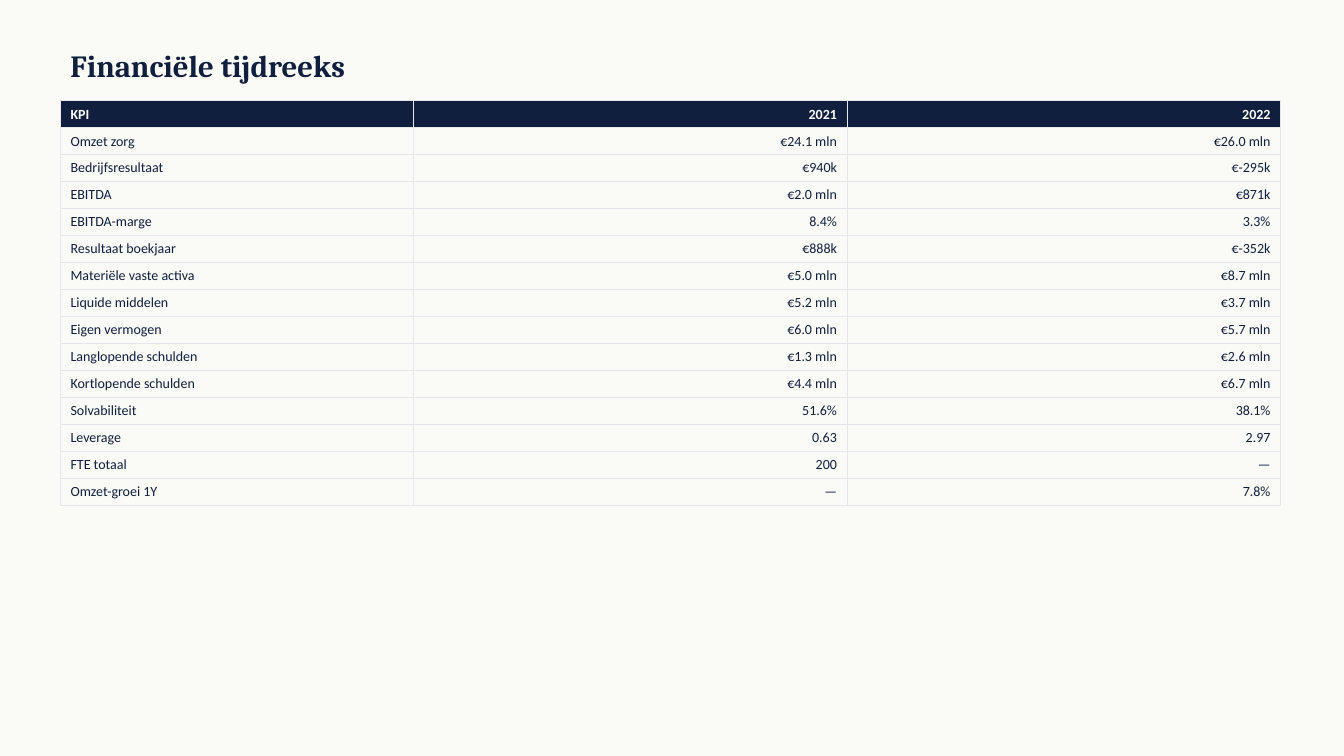
from dataclasses import dataclass

from lxml import etree
from pptx import Presentation, util as u
from pptx.dml.color import RGBColor
from pptx.enum import text
from pptx.oxml import ns

PX = 9144


@dataclass(frozen=True)
class Theme:
    paper: str = "FAFAF7"
    navy: str = "0F1F3D"
    white: str = "FFFFFF"
    rule: str = "E5E7EB"
    rule_pt: float = 0.5
    title_font: str = "Cambria"
    title_pt: int = 22
    body_font: str = "Calibri"
    body_pt: int = 10


T = Theme()

KPIS = [
    ("KPI", "2021", "2022"),
    ("Omzet zorg", "€24.1 mln", "€26.0 mln"),
    ("Bedrijfsresultaat", "€940k", "€-295k"),
    ("EBITDA", "€2.0 mln", "€871k"),
    ("EBITDA-marge", "8.4%", "3.3%"),
    ("Resultaat boekjaar", "€888k", "€-352k"),
    ("Materiële vaste activa", "€5.0 mln", "€8.7 mln"),
    ("Liquide middelen", "€5.2 mln", "€3.7 mln"),
    ("Eigen vermogen", "€6.0 mln", "€5.7 mln"),
    ("Langlopende schulden", "€1.3 mln", "€2.6 mln"),
    ("Kortlopende schulden", "€4.4 mln", "€6.7 mln"),
    ("Solvabiliteit", "51.6%", "38.1%"),
    ("Leverage", "0.63", "2.97"),
    ("FTE totaal", "200", "—"),
    ("Omzet-groei 1Y", "—", "7.8%"),
]


def px(n):
    return u.Emu(n * PX)


def rgb(color):
    return RGBColor.from_string(color)


def write(tf, words, *, font=T.body_font, size=T.body_pt, color=T.navy,
          bold=False, align=text.PP_ALIGN.LEFT):
    p = tf.paragraphs[0]
    p.alignment = align
    r = p.add_run()
    r.text = words
    r.font.name = font
    r.font.size = u.Pt(size)
    r.font.bold = bold
    r.font.color.rgb = rgb(color)


def add_title(s, words, x, y, w, h):
    tf = s.shapes.add_textbox(px(x), px(y), px(w), px(h)).text_frame
    tf.word_wrap = True
    tf.vertical_anchor = text.MSO_ANCHOR.MIDDLE
    write(tf, words, font=T.title_font, size=T.title_pt, bold=True)


def set_borders(cell):
    tc_pr = cell._tc.get_or_add_tcPr()
    for side in ("a:lnL", "a:lnR", "a:lnT", "a:lnB"):
        ln = etree.SubElement(tc_pr, ns.qn(side), w=str(u.Pt(T.rule_pt)))
        fill = etree.SubElement(ln, ns.qn("a:solidFill"))
        etree.SubElement(fill, ns.qn("a:srgbClr"), val=T.rule)


def fill_cell(cell, words, *, header, numeric):
    write(cell.text_frame, words, bold=header,
          color=T.white if header else T.navy,
          align=text.PP_ALIGN.RIGHT if numeric else text.PP_ALIGN.LEFT)
    set_borders(cell)
    if header:
        cell.fill.solid()
        cell.fill.fore_color.rgb = rgb(T.navy)
    else:
        cell.fill.background()


def add_kpi_table(s, rows, x, y, col_widths, row_h):
    tbl = s.shapes.add_table(len(rows), len(col_widths), px(x), px(y),
                             px(sum(col_widths)), px(row_h * len(rows))).table
    tbl.horz_banding = False
    for col, w in zip(tbl.columns, col_widths):
        col.width = px(w)
    for i, row in enumerate(rows):
        for j, words in enumerate(row):
            fill_cell(tbl.cell(i, j), words, header=i == 0, numeric=j > 0)


def main():
    prs = Presentation()
    prs.slide_width, prs.slide_height = px(1333), px(750)
    s = prs.slides.add_slide(prs.slide_layouts[6])
    s.background.fill.solid()
    s.background.fill.fore_color.rgb = rgb(T.paper)
    add_title(s, "Financiële tijdreeks", 60, 40, 1200, 50)
    add_kpi_table(s, KPIS, 60, 100, (350, 430, 430), 26)
    prs.save("out.pptx")


if __name__ == "__main__":
    main()
